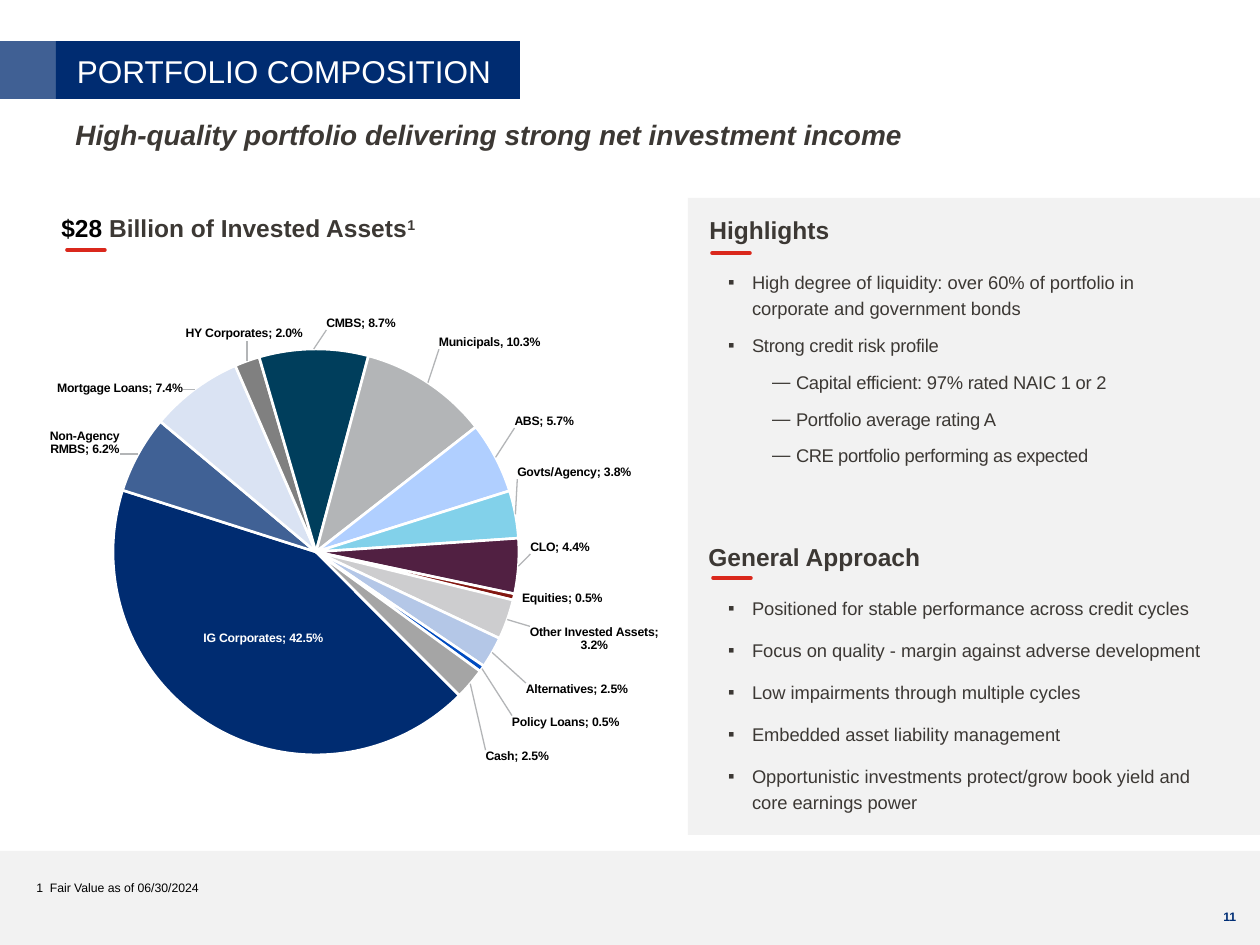
import math
from dataclasses import dataclass
from itertools import accumulate
from typing import NamedTuple

from lxml import etree
from pptx import Presentation, util as u
from pptx.chart.data import CategoryChartData
from pptx.dml.color import RGBColor
from pptx.enum import chart as ch, shapes, text
from pptx.oxml import ns, parse_xml

SCALE = 914400 / 126


@dataclass(frozen=True)
class Theme:
    navy: str = "002C71"
    ink: str = "3C3834"
    black: str = "000000"
    white: str = "FFFFFF"
    pale: str = "F2F2F2"
    red: str = "DA281C"
    grey: str = "B3B5B7"
    number: str = "002E76"
    face: str = "Arial"
    small: float = 7
    body: float = 10.5
    head: float = 14
    lead: float = 16
    title: float = 18


T = Theme()


class Box(NamedTuple):
    x: int
    y: int
    w: int
    h: int


class Slice(NamedTuple):
    name: str
    value: float
    color: str
    label: Box | None = None  # x, y are the centre of the label


class Item(NamedTuple):
    words: str
    level: int = 0
    spc: int = 0


SLICES = [
    Slice("IG Corporates", 0.425, T.navy),
    Slice("Non-Agency RMBS", 0.062, "406195", Box(85, 442, 70, 26)),
    Slice("Mortgage Loans", 0.074, "DAE3F3", Box(118, 390, 126, 13)),
    Slice("HY Corporates", 0.02, "808080", Box(240, 336, 118, 13)),
    Slice("CMBS", 0.087, "003E5C", Box(361, 326, 65, 13)),
    Slice("Municipals", 0.103, T.grey, Box(489, 344, 96, 13)),
    Slice("ABS", 0.057, "B0CFFF", Box(542, 420, 56, 13)),
    Slice("Govts/Agency", 0.038, "82D1EA", Box(570, 469, 108, 13)),
    Slice("CLO", 0.044, "512042", Box(557, 547, 56, 13)),
    Slice("Equities", 0.005, "831711", Box(559, 602, 76, 13)),
    Slice("Other Invested Assets", 0.032, "CDCDCF", Box(590, 642, 122, 26)),
    Slice("Alternatives", 0.025, "B4C7E7", Box(574, 691, 97, 13)),
    Slice("Policy Loans", 0.005, "004BC0", Box(563, 723, 102, 13)),
    Slice("Cash", 0.025, "A5A5A5", Box(516, 757, 60, 13)),
]
HIGHS = [
    Item("High degree of liquidity: over 60% of portfolio in corporate and government bonds"),
    Item("Strong credit risk profile", 0, -10),
    Item("Capital efficient: 97% rated NAIC 1 or 2", 1, -10),
    Item("Portfolio average rating A", 1, -10),
    Item("CRE portfolio performing as expected", 1, -20),
]
GOALS = [
    Item("Positioned for stable performance across credit cycles"),
    Item("Focus on quality - margin against adverse development"),
    Item("Low impairments through multiple cycles"),
    Item("Embedded asset liability management"),
    Item("Opportunistic investments protect/grow book yield and \vcore earnings power"),
]
CHART = Box(30, 270, 665, 529)
PIE = Box(113, 349, 406, 406)
START = 135
PAD_X, PAD_Y = 6, 5


def px(n: float) -> u.Emu:
    return u.Emu(round(n * SCALE))


def style(font, size: float, color: str, **more) -> None:
    for key, val in {"name": T.face, "size": u.Pt(size), **more}.items():
        setattr(font, key, val)
    font.color.rgb = RGBColor.from_string(color)


def put(par, words: str, size: float, color: str, **more) -> list:
    """Add words to a paragraph, with a line break at each vertical tab."""
    runs = []
    for i, part in enumerate(words.split("\v")):
        if i:
            par.add_line_break()
        run = par.add_run()
        run.text = part
        style(run.font, size, color, **more)
        runs.append(run)
    return runs


def move(shape, box: Box) -> None:
    for key, val in zip(("left", "top", "width", "height"), box):
        setattr(shape, key, px(val))


def setup(shape, **more):
    frame = shape.text_frame
    form = {"word_wrap": True, "auto_size": text.MSO_AUTO_SIZE.NONE,
            "vertical_anchor": text.MSO_ANCHOR.TOP, **more}
    for key, val in form.items():
        setattr(frame, key, val)
    return frame


def note(slide, box: Box, words: str, size: float, color: str, **more):
    shape = slide.shapes.add_textbox(*map(px, box))
    par = setup(shape).paragraphs[0]
    put(par, words, size, color, **more)
    return par


def block(slide, box: Box, color: str, alpha: int = 100) -> None:
    shape = slide.shapes.add_shape(shapes.MSO_SHAPE.RECTANGLE, *map(px, box))
    shape.shadow.inherit = False
    shape.fill.solid()
    shape.fill.fore_color.rgb = RGBColor.from_string(color)
    shape.line.fill.background()
    if alpha < 100:
        tone = shape._element.spPr.find(".//" + ns.qn("a:srgbClr"))
        etree.SubElement(tone, ns.qn("a:alpha"), val=str(alpha * 1000))


def rule(slide, x: int, y: int) -> None:
    line = slide.shapes.add_connector(
        shapes.MSO_CONNECTOR.STRAIGHT, *map(px, (x, y, x + 38, y)))
    line.line.color.rgb = RGBColor.from_string(T.red)
    line.line.width = u.Pt(2)
    line.line._ln.set("cap", "rnd")
    etree.SubElement(line._element.spPr, ns.qn("a:effectLst"))


def bullets(shape, box: Box, items: list[Item], gap: int) -> None:
    move(shape, box)
    frame = setup(shape, margin_left=0, margin_right=px(50), margin_top=px(2), margin_bottom=0)
    for i, item in enumerate(items):
        par = frame.add_paragraph() if i else frame.paragraphs[0]
        par.level = item.level
        props = par._p.get_or_add_pPr()
        props.set("marL", str(px((87, 131)[item.level])))
        props.set("indent", str(px(-24)))
        tint = etree.SubElement(props, ns.qn("a:buClr"))
        etree.SubElement(tint, ns.qn("a:srgbClr"), val=T.ink)
        etree.SubElement(props, ns.qn("a:buFont"), typeface=T.face)
        etree.SubElement(props, ns.qn("a:buChar"), char="▪—"[item.level])
        par.line_spacing = u.Pt(15)
        par.space_before = u.Pt(gap if i else 0)
        for run in put(par, item.words, T.body, T.ink):
            if item.spc:
                run._r.get_or_add_rPr().set("spc", str(item.spc))


def layout(inner: str):
    return parse_xml(f'<c:layout {ns.nsdecls("c")}><c:manualLayout>{inner}'
                     '</c:manualLayout></c:layout>')


def shift(part: Slice, turn: float) -> tuple[float, float]:
    """Offset of a label from its usual place outside the pie, as shares of the chart."""
    rad, box = PIE.w / 2, part.label
    sin, cos = math.sin(turn), math.cos(turn)
    side = [0 if abs(v) < 0.15 else math.copysign(1, v) for v in (sin, -cos)]
    x = PIE.x + rad + rad * sin + side[0] * (box.w / 2 + PAD_X)
    y = PIE.y + rad - rad * cos + side[1] * (box.h / 2 + PAD_Y)
    return (box.x - x) / CHART.w, (box.y - y) / CHART.h


def tag(point, part: Slice, turn: float) -> None:
    label = point.data_label
    spot = ch.XL_LABEL_POSITION
    label.position = spot.OUTSIDE_END if part.label else spot.CENTER
    if part.name == "Municipals":
        put(label.text_frame.paragraphs[0], "Municipals, 10.3%", T.small, T.black, bold=True)
    else:
        style(label.font, T.small, T.black if part.label else T.white, bold=True)
    node = label._dLbl
    node.find(ns.qn("c:showCatName")).set("val", "1")
    etree.SubElement(node, ns.qn("c:separator")).text = "; "
    if part.label:
        x, y = shift(part, turn)
        node.insert(1, layout(f'<c:x val="{x:.4f}"/><c:y val="{y:.4f}"/>'))


def pie(slide) -> None:
    data = CategoryChartData(number_format="0.0%")
    data.categories = [part.name for part in SLICES]
    data.add_series("Series 1", [part.value for part in SLICES])
    chart = slide.shapes.add_chart(ch.XL_CHART_TYPE.PIE, *map(px, CHART), data).chart
    chart.has_title = chart.has_legend = False
    style(chart.font, 10, T.ink, name="Calibri")
    plot = chart.plots[0]
    plot.vary_by_categories = True
    etree.SubElement(plot._element, ns.qn("c:firstSliceAng"), val=str(START))
    area = plot._element.getparent()
    for old in area.findall(ns.qn("c:layout")):
        area.remove(old)
    dims = {"x": (PIE.x - CHART.x) / CHART.w, "y": (PIE.y - CHART.y) / CHART.h,
            "w": PIE.w / CHART.w, "h": PIE.h / CHART.h}
    modes = '<c:layoutTarget val="inner"/><c:xMode val="edge"/><c:yMode val="edge"/>'
    area.insert(0, layout(modes + "".join(f'<c:{k} val="{v:.4f}"/>' for k, v in dims.items())))
    series = plot.series[0]
    labels = series.data_labels
    for key, val in {"number_format": "0.0%", "number_format_is_linked": False,
                     "show_category_name": True, "show_value": True}.items():
        setattr(labels, key, val)
    style(labels.font, T.small, T.black, bold=True)
    total = sum(part.value for part in SLICES)
    ends = accumulate(part.value for part in SLICES)
    for i, (part, end) in enumerate(zip(SLICES, ends)):
        point = series.points[i]
        point.format.fill.solid()
        point.format.fill.fore_color.rgb = RGBColor.from_string(part.color)
        point.format.line.color.rgb = RGBColor.from_string(T.white)
        point.format.line.width = u.Pt(1.5)
        tag(point, part, math.radians(START + 360 * (end - part.value / 2) / total))
    root = labels._element
    for old in root.findall(ns.qn("c:showLeaderLines")):
        root.remove(old)
    etree.SubElement(root, ns.qn("c:separator")).text = "; "
    etree.SubElement(root, ns.qn("c:showLeaderLines"), val="1")
    root.append(parse_xml(
        f'<c:leaderLines {ns.nsdecls("c", "a")}><c:spPr><a:ln w="9525"><a:solidFill>'
        f'<a:srgbClr val="{T.grey}"/></a:solidFill></a:ln></c:spPr></c:leaderLines>'))


def main() -> None:
    deck = Presentation()
    deck.slide_width, deck.slide_height = px(1260), px(945)
    slide = deck.slides.add_slide(deck.slide_layouts[3])
    title, highs, goals = slide.placeholders
    block(slide, Box(0, 851, 1260, 94), T.pale)
    block(slide, Box(688, 198, 572, 637), T.pale)
    block(slide, Box(0, 41, 56, 58), T.navy, 75)
    block(slide, Box(56, 41, 464, 58), T.navy)
    for holder in (title, highs, goals):
        slide.shapes._spTree.append(holder._element)
    move(title, Box(77, 50, 721, 49))
    par = setup(title, margin_left=0).paragraphs[0]
    par.alignment, par.line_spacing = text.PP_ALIGN.LEFT, 0.9
    put(par, "PORTFOLIO COMPOSITION", T.title, T.white)
    note(slide, Box(63, 115, 1153, 43),
         "High-quality portfolio delivering strong net investment income",
         T.lead, T.ink, bold=True, italic=True).line_spacing = 0.9
    par = note(slide, Box(49, 207, 557, 47), "$28 ", T.head, T.black, bold=True)
    put(par, "Billion of Invested Assets", T.head, T.ink, bold=True)
    mark = put(par, "1", T.head, T.ink, bold=True)[0]
    mark._r.get_or_add_rPr().set("baseline", "30000")
    note(slide, Box(697, 209, 362, 43), "Highlights", T.head, T.ink, bold=True)
    note(slide, Box(696, 536, 315, 43), "General Approach", T.head, T.ink, bold=True)
    for x, y in ((67, 250), (712, 253), (713, 578)):
        rule(slide, x, y)
    pie(slide)
    bullets(highs, Box(665, 265, 595, 315), HIGHS, 6)
    bullets(goals, Box(665, 591, 595, 209), GOALS, 9)
    note(slide, Box(24, 876, 528, 32), "1  Fair Value as of 06/30/2024",
         T.small, T.black).line_spacing = 0.9
    note(slide, Box(1211, 903, 49, 28), "11", T.small, T.number, bold=True)
    deck.save("out.pptx")


if __name__ == "__main__":
    main()
